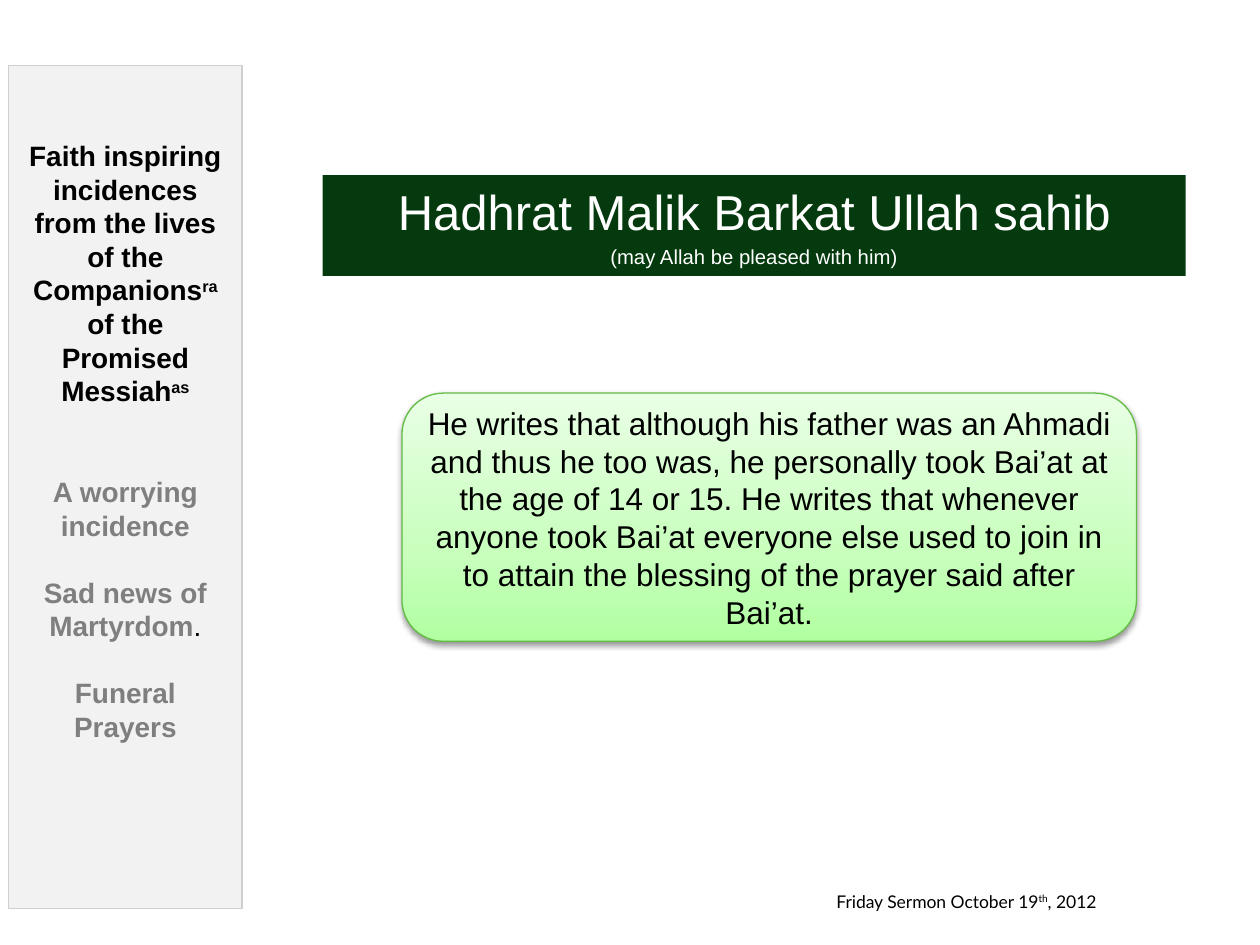
import copy

import lxml.etree
import pptx
import pptx.dml.color
import pptx.enum.shapes
import pptx.enum.text
import pptx.oxml.ns
import pptx.util

Inches = pptx.util.Inches
Pt = pptx.util.Pt
qn = pptx.oxml.ns.qn
SHAPES = pptx.enum.shapes.MSO_SHAPE
ANCHOR = pptx.enum.text.MSO_ANCHOR
CENTER = pptx.enum.text.PP_ALIGN.CENTER
BLACK, GREY, WHITE = "000000", "7F7F7F", "FFFFFF"


def color(code):
    """Return the colour for a hex string."""
    return pptx.dml.color.RGBColor.from_string(code)


def add_span(para, text, size, code, font="Arial", bold=False, raised=False):
    """Add a formatted run, raised as a superscript if asked."""
    span = para.add_run()
    span.text = text
    span.font.name = font
    span.font.size = Pt(size)
    span.font.bold = bold
    span.font.color.rgb = color(code)
    if raised:
        span.font._element.set("baseline", "30000")


def add_panel(page, kind, box, line):
    """Add an outlined shape without a shadow in the given box."""
    panel = page.shapes.add_shape(kind, *map(Inches, box))
    panel.shadow.inherit = False
    panel.line.color.rgb = color(line)
    panel.line.width = Pt(0.75)
    panel.text_frame.word_wrap = True
    return panel


def add_banner(page, box):
    """Turn the title placeholder into the dark green banner."""
    banner = page.shapes.title
    banner.left, banner.top, banner.width, banner.height = map(Inches, box)
    banner.fill.solid()
    banner.fill.fore_color.rgb = color("043A0D")
    frame = banner.text_frame
    frame.auto_size = pptx.enum.text.MSO_AUTO_SIZE.NONE
    frame.vertical_anchor = ANCHOR.TOP
    name, blessing = frame.paragraphs[0], frame.add_paragraph()
    name.alignment = blessing.alignment = CENTER
    add_span(name, "Hadhrat Malik Barkat Ullah sahib", 28, WHITE)
    add_span(blessing, "(may Allah be pleased with him)", 20, WHITE, raised=True)


def add_date(page, box):
    """Add the sermon date at the foot of the page."""
    frame = page.shapes.add_textbox(*map(Inches, box)).text_frame
    frame.word_wrap = False
    para = frame.paragraphs[0]
    for text, raised in (("Friday Sermon October 19", False), ("th", True), (", 2012", False)):
        add_span(para, text, 10, BLACK, "Lato", raised=raised)


def shade_green(panel):
    """Give the panel a three-stop green gradient and a soft shadow below."""
    panel.fill.gradient()
    panel.fill.gradient_angle = 90
    stops = panel._element.spPr.find(".//" + qn("a:gsLst"))
    stops.insert(1, copy.deepcopy(stops[0]))
    shades = ((0, "B1FFA1"), (0.35, "C8FFBD"), (1, "E9FFE5"))
    for stop, (position, code) in zip(panel.fill.gradient_stops, shades):
        stop.position = position
        stop.color.rgb = color(code)
    effects = panel._element.spPr.find(qn("a:effectLst"))
    shadow = lxml.etree.SubElement(
        effects, qn("a:outerShdw"), blurRad=str(Pt(3.1)), dist=str(Pt(1.6)),
        dir="5400000", rotWithShape="0")
    tint = lxml.etree.SubElement(shadow, qn("a:srgbClr"), val=BLACK)
    lxml.etree.SubElement(tint, qn("a:alpha"), val="38000")


def add_story(page, box):
    """Add the rounded green panel with the story."""
    story = add_panel(page, SHAPES.ROUNDED_RECTANGLE, box, "62BC44")
    shade_green(story)
    story.text_frame.vertical_anchor = ANCHOR.MIDDLE
    para = story.text_frame.paragraphs[0]
    para.alignment = CENTER
    add_span(para, "He writes that although his father was an Ahmadi and thus he too was, "
             "he personally took Bai’at at the age of 14 or 15. He writes that whenever "
             "anyone took Bai’at everyone else used to join in to attain the blessing "
             "of the prayer said after Bai’at.", 18, BLACK)


def add_sidebar(page, box):
    """Add the grey sidebar of topics with the current one in black."""
    sidebar = add_panel(page, SHAPES.RECTANGLE, box, "CFCFCF")
    sidebar.fill.solid()
    sidebar.fill.fore_color.rgb = color("F2F2F2")
    frame = sidebar.text_frame
    frame.vertical_anchor = ANCHOR.TOP
    frame.margin_top = Inches(0.58)
    current = frame.paragraphs[0]
    current.alignment = CENTER
    for text, raised in (("Faith inspiring incidences from the lives of the Companions", False),
                         ("ra", True), (" of the Promised Messiah", False), ("as", True)):
        add_span(current, text, 16, BLACK, bold=True, raised=raised)
    topics = (("A worrying incidence", "", 38.4), ("Sad news of Martyrdom", ".", 19.2),
              ("Funeral Prayers", "", 19.2))
    for topic, ending, gap in topics:
        para = frame.add_paragraph()
        para.alignment = CENTER
        para.space_before = Pt(gap)
        add_span(para, topic, 16, GREY, bold=True)
        if ending:
            add_span(para, ending, 16, BLACK)


def main():
    """Build the slide and save it."""
    deck = pptx.Presentation()
    deck.slide_width, deck.slide_height = Inches(10), Inches(7.5)
    page = deck.slides.add_slide(deck.slide_layouts[5])
    add_banner(page, (2.56, 1.39, 6.85, 0.8))
    add_date(page, (6.54, 7.02, 2.36, 0.27))
    add_story(page, (3.19, 3.12, 5.83, 1.97))
    add_sidebar(page, (0.07, 0.52, 1.85, 6.69))
    deck.save("out.pptx")


if __name__ == "__main__":
    main()
